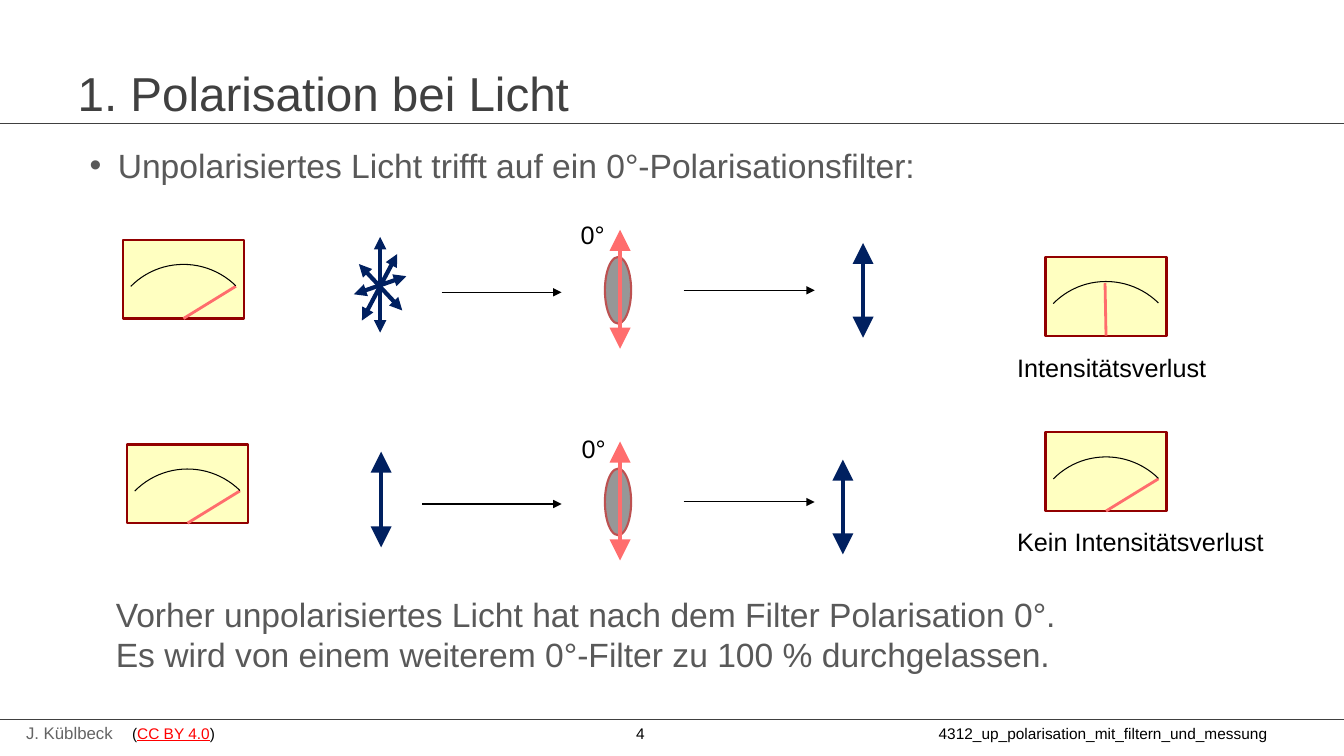
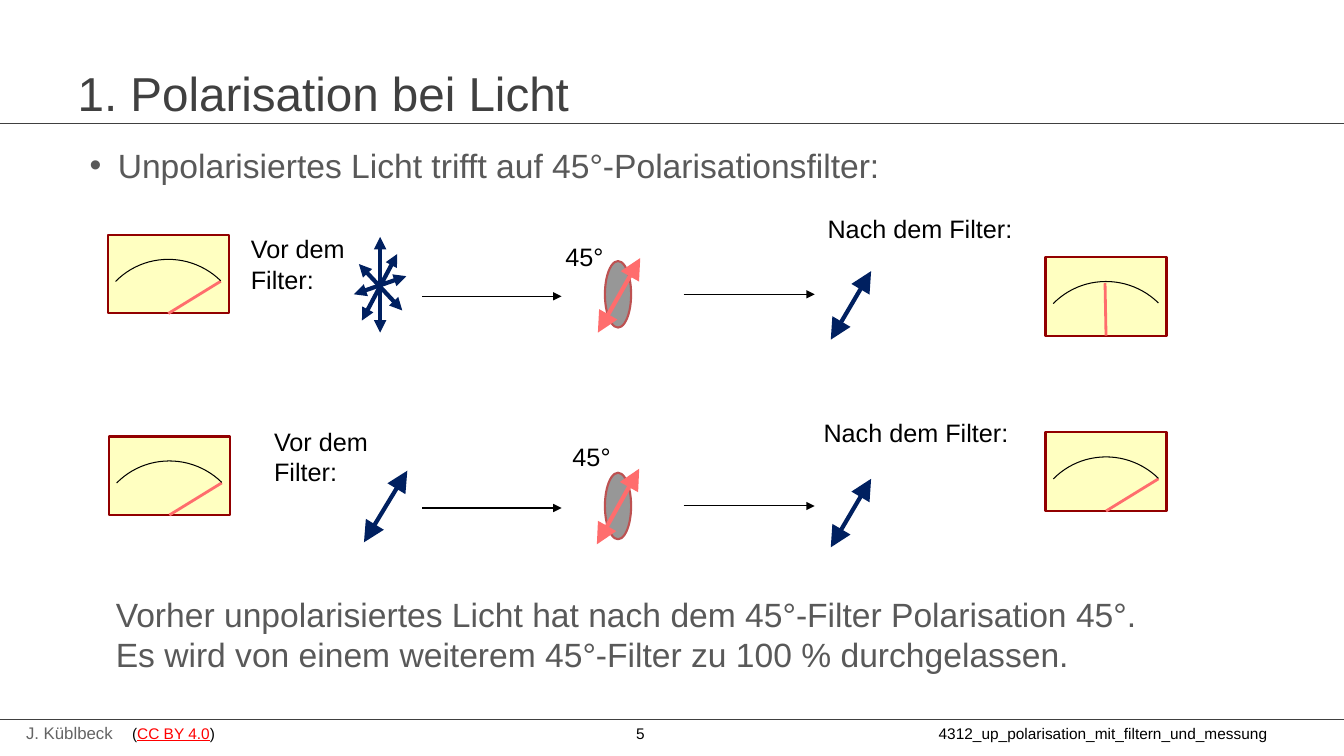
"""Build two slides on the polarisation of light by filters."""
from dataclasses import dataclass

from lxml import etree
from pptx import Presentation
from pptx.dml.color import RGBColor
from pptx.enum.shapes import MSO_CONNECTOR, MSO_SHAPE
from pptx.enum.text import MSO_ANCHOR, MSO_AUTO_SIZE, PP_ALIGN
from pptx.oxml.ns import qn
from pptx.util import Inches, Pt

STRAIGHT = MSO_CONNECTOR.STRAIGHT
RECTANGLE, OVAL, ARC = MSO_SHAPE.RECTANGLE, MSO_SHAPE.OVAL, MSO_SHAPE.ARC
MIDDLE, LEFT, NO_AUTOFIT = MSO_ANCHOR.MIDDLE, PP_ALIGN.LEFT, MSO_AUTO_SIZE.NONE

FONT = "Arial"
COLORS = {
    "background": "FFFFFF", "title": "404040", "body": "595959", "rule": "404040",
    "author": "646464", "link": "FF0000", "black": "000000", "light": "002060",
    "axis": "FF6D6D", "filter": "979797", "filter_edge": "BD5151",
    "gauge": "FFFFC1", "gauge_edge": "920000",
}
SLIDE_WIDTH, SLIDE_HEIGHT = 13.33, 7.5
TITLE = "1. Polarisation bei Licht"
FILE_NAME = "4312_up_polarisation_mit_filtern_und_messung"
FIRST_NUMBER = 4
RIGHT_GAUGE_X = 10.37

Point = tuple[float, float]


@dataclass(frozen=True)
class Segment:
    start: Point
    end: Point


@dataclass(frozen=True)
class Span:
    text: str
    color: str = "black"
    underline: bool = False


@dataclass(frozen=True)
class Caption:
    at: Point
    lines: tuple[str, ...]


@dataclass(frozen=True)
class Experiment:
    beam_y: float
    beam_x: float
    left_gauge: Point
    right_gauge_y: float
    loses_intensity: bool
    incoming: tuple[Segment, ...]
    filter_axis: Segment
    outgoing: Segment
    captions: tuple[Caption, ...]


@dataclass(frozen=True)
class Topic:
    question: str
    conclusion: tuple[str, ...]
    experiments: tuple[Experiment, ...]


UNPOLARISED = (
    Segment((3.77, 2.35), (3.77, 3.3)),
    Segment((3.94, 2.52), (3.59, 3.18)),
    Segment((4.03, 2.74), (3.51, 2.92)),
    Segment((3.56, 2.62), (3.99, 3.08)),
)
BEFORE = ("Vor dem", "Filter:")
AFTER = ("Nach dem Filter:",)

TOPICS = (
    Topic(
        "Unpolarisiertes Licht trifft auf ein 0°-Polarisationsfilter:",
        ("Vorher unpolarisiertes Licht hat nach dem Filter Polarisation 0°.",
         "Es wird von einem weiterem 0°-Filter zu 100 % durchgelassen."),
        (
            Experiment(
                2.9, 4.38, (1.22, 2.38), 2.55, True, UNPOLARISED,
                Segment((6.15, 2.28), (6.15, 3.46)), Segment((8.56, 2.41), (8.56, 3.35)),
                (Caption((5.66, 2.13), ("0°",)),
                 Caption((9.99, 3.45), ("Intensitätsverlust",))),
            ),
            Experiment(
                5.0, 4.19, (1.26, 4.41), 4.29, False,
                (Segment((3.78, 4.48), (3.78, 5.43)),),
                Segment((6.15, 4.38), (6.15, 5.56)), Segment((8.36, 4.56), (8.36, 5.5)),
                (Caption((5.67, 4.25), ("0°",)),
                 Caption((9.99, 5.17), ("Kein Intensitätsverlust",))),
            ),
        ),
    ),
    Topic(
        "Unpolarisiertes Licht trifft auf 45°-Polarisationsfilter:",
        ("Vorher unpolarisiertes Licht hat nach dem 45°-Filter Polarisation 45°.",
         "Es wird von einem weiterem 45°-Filter zu 100 % durchgelassen."),
        (
            Experiment(
                2.94, 4.19, (1.07, 2.33), 2.55, True, UNPOLARISED,
                Segment((6.35, 2.56), (5.93, 3.3)), Segment((8.64, 2.69), (8.24, 3.37)),
                (Caption((5.51, 2.34), ("45°",)), Caption((2.39, 2.27), BEFORE),
                 Caption((8.11, 2.07), AFTER)),
            ),
            Experiment(
                5.04, 4.19, (1.08, 4.33), 4.29, False,
                (Segment((4.04, 4.67), (3.61, 5.38)),),
                Segment((6.34, 4.65), (5.92, 5.4)), Segment((8.64, 4.75), (8.24, 5.43)),
                (Caption((5.58, 4.33), ("45°",)), Caption((2.62, 4.18), BEFORE),
                 Caption((8.07, 4.09), AFTER)),
            ),
        ),
    ),
)


def rgb(name: str) -> RGBColor:
    return RGBColor.from_string(COLORS[name])


def add_run(para, span: Span, size: float) -> None:
    run = para.add_run()
    run.text = span.text
    run.font.name = FONT
    run.font.size = Pt(size)
    run.font.color.rgb = rgb(span.color)
    if span.underline:
        run.font.underline = True


def add_text(page, at: Point, width: float, height: float, size: float,
             lines: tuple[tuple[Span, ...], ...], inset: bool = True):
    box = page.shapes.add_textbox(*map(Inches, (*at, width, height)))
    frame = box.text_frame
    frame.word_wrap = True
    if not inset:
        frame.margin_left = frame.margin_right = 0
        frame.margin_top = frame.margin_bottom = 0
    para = frame.paragraphs[0]
    for index, spans in enumerate(lines):
        if index:
            para.add_line_break()
        for span in spans:
            add_run(para, span, size)
    return para


def indent(para, margin: float, first: float = 0, bullet: str = "") -> None:
    para.space_before = Pt(3)
    properties = para._p.get_or_add_pPr()
    properties.set("marL", str(Inches(margin)))
    properties.set("indent", str(Inches(first)))
    if bullet:
        color = etree.SubElement(properties, qn("a:buClr"))
        etree.SubElement(color, qn("a:srgbClr")).set("val", COLORS["body"])
        etree.SubElement(properties, qn("a:buFont")).set("typeface", FONT)
        etree.SubElement(properties, qn("a:buChar")).set("char", bullet)


def add_line(page, segment: Segment, color: str, weight: float,
             heads: tuple[str, ...] = (), head_size: str = "med") -> None:
    line = page.shapes.add_connector(
        STRAIGHT, *map(Inches, (*segment.start, *segment.end)))
    line.line.color.rgb = rgb(color)
    line.line.width = Pt(weight)
    outline = line.line._get_or_add_ln()
    for head in heads:
        end = etree.SubElement(outline, qn(f"a:{head}"))
        end.set("type", "triangle")
        end.set("w", head_size)
        end.set("len", head_size)
    etree.SubElement(line._element.spPr, qn("a:effectLst"))


def add_double_arrow(page, segment: Segment, color: str, head_size: str = "lg") -> None:
    add_line(page, segment, color, 3, ("headEnd", "tailEnd"), head_size)


def add_beam(page, left: float, right: float, y: float) -> None:
    add_line(page, Segment((left, y), (right, y)), "black", 0.75, ("tailEnd",))


def add_outlined(page, kind, at: Point, width: float, height: float,
                 fill: str, edge: str, weight: float):
    shape = page.shapes.add_shape(kind, *map(Inches, (*at, width, height)))
    shape.shadow.inherit = False
    if fill:
        shape.fill.solid()
        shape.fill.fore_color.rgb = rgb(fill)
    else:
        shape.fill.background()
    shape.line.color.rgb = rgb(edge)
    shape.line.width = Pt(weight)
    return shape


def add_gauge(page, at: Point, half: bool) -> None:
    x, y = at
    add_outlined(page, RECTANGLE, at, 1.2, 0.78, "gauge", "gauge_edge", 1.5)
    tip = (x + 0.59, y + 0.26) if half else (x + 1.12, y + 0.46)
    add_line(page, Segment((x + 0.6, y + 0.78), tip), "axis", 2)
    scale = add_outlined(page, ARC, (x - 0.13, y + 0.24), 1.47, 1.48, "", "black", 0.75)
    scale.rotation = 314.5


def add_experiment(page, experiment: Experiment) -> None:
    y = experiment.beam_y
    add_gauge(page, experiment.left_gauge, False)
    add_gauge(page, (RIGHT_GAUGE_X, experiment.right_gauge_y), experiment.loses_intensity)
    add_outlined(page, OVAL, (6, y - 0.35), 0.26, 0.66, "filter", "filter_edge", 1.5)
    add_beam(page, experiment.beam_x, 5.57, y)
    add_beam(page, 6.78, 8.08, y - 0.02)
    head_size = "med" if len(experiment.incoming) > 1 else "lg"
    for segment in experiment.incoming:
        add_double_arrow(page, segment, "light", head_size)
    add_double_arrow(page, experiment.filter_axis, "axis")
    add_double_arrow(page, experiment.outgoing, "light")
    for caption in experiment.captions:
        lines = tuple((Span(line),) for line in caption.lines)
        add_text(page, caption.at, 2.8, 0.1 + 0.3 * len(lines), 18, lines)


def add_frame(page, number: int) -> None:
    page.background.fill.solid()
    page.background.fill.fore_color.rgb = rgb("background")
    for y in (1.23, 7.14):
        add_line(page, Segment((0, y), (SLIDE_WIDTH, y)), "rule", 0.75)
    title = page.shapes.title
    title.left, title.top, title.width, title.height = map(Inches, (0.67, 0.6, 12, 0.63))
    frame = title.text_frame
    frame.auto_size = NO_AUTOFIT
    frame.vertical_anchor = MIDDLE
    frame.paragraphs[0].alignment = LEFT
    add_run(frame.paragraphs[0], Span(TITLE, "title"), 34)
    add_text(page, (0.16, 7.12), 1.55, 0.3, 12, ((Span("J. Küblbeck", "author"),),))
    licence = (Span("("), Span("CC BY 4.0", "link", True), Span(")"))
    for x, width, spans in ((1.31, 2, licence), (6.31, 0.5, (Span(str(number)),)),
                            (9.31, 3.73, (Span(FILE_NAME),))):
        add_text(page, (x, 7.18), width, 0.19, 11, (spans,), inset=False)


def add_topic(deck, topic: Topic, number: int) -> None:
    page = deck.slides.add_slide(deck.slide_layouts.get_by_name("Title Only"))
    add_frame(page, number)
    question = add_text(page, (0.67, 1.39), 12, 0.5, 24, ((Span(topic.question, "body"),),))
    indent(question, 0.4, -0.28, "•")
    for experiment in topic.experiments:
        add_experiment(page, experiment)
    lines = tuple((Span(line, "body"),) for line in topic.conclusion)
    indent(add_text(page, (0.6, 5.84), 12, 1, 24, lines), 0.45)


def main() -> None:
    deck = Presentation()
    deck.slide_width, deck.slide_height = Inches(SLIDE_WIDTH), Inches(SLIDE_HEIGHT)
    for number, topic in enumerate(TOPICS, FIRST_NUMBER):
        add_topic(deck, topic, number)
    deck.save("out.pptx")


if __name__ == "__main__":
    main()
